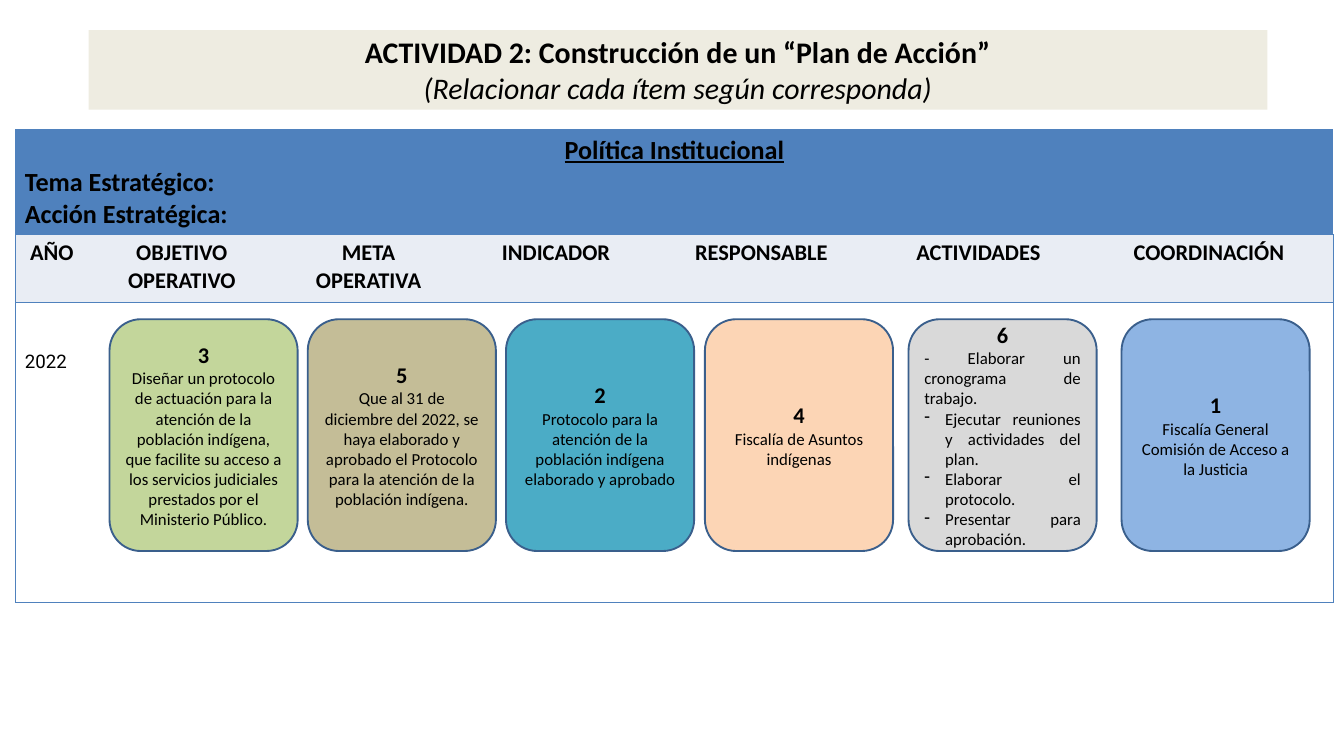
import pptx
import pptx.dml.color
import pptx.enum.shapes
import pptx.enum.text
import pptx.oxml.ns
import pptx.util
from dataclasses import dataclass
from lxml import etree

Inches = pptx.util.Inches
Pt = pptx.util.Pt
ALIGN = pptx.enum.text.PP_ALIGN
ANCHOR = pptx.enum.text.MSO_ANCHOR
SHAPE = pptx.enum.shapes.MSO_SHAPE
qn = pptx.oxml.ns.qn


@dataclass(frozen=True)
class Theme:
    font: str = "Calibri"
    year_font: str = "Roboto"
    text: str = "000000"
    title_fill: str = "EEECE1"
    policy_fill: str = "4F81BD"
    header_fill: str = "E9EDF4"
    body_fill: str = "FFFFFF"
    border: str = "4F81BD"
    card_line: str = "3A5F8C"
    title_size: int = 32
    policy_size: int = 28
    header_size: int = 24
    year_size: int = 20
    card_size: int = 18


THEME = Theme()

COLUMN_WIDTHS = [1.08, 2.79, 2.77, 2.81, 3.3, 3.16, 3.7]
ROW_HEIGHTS = [1.56, 1.01, 4.46]
POLICY = "Política Institucional\nTema Estratégico:\nAcción Estratégica:"
HEADERS = ["AÑO", "OBJETIVO OPERATIVO", "META\nOPERATIVA", "INDICADOR",
           "RESPONSABLE", "ACTIVIDADES", "COORDINACIÓN"]

# Cards: left edge, fill, number and text
CARDS = [
    (1.63, "C3D69B", "3\nDiseñar un protocolo de actuación para la atención de la "
     "población indígena, que facilite su acceso a los servicios judiciales "
     "prestados por el Ministerio Público."),
    (4.58, "C4BD97", "5\nQue al 31 de diciembre del 2022, se haya elaborado y "
     "aprobado el Protocolo para la atención de la población indígena."),
    (7.53, "4BACC6", "2\nProtocolo para la atención de la población indígena "
     "elaborado y aprobado"),
    (10.49, "FCD5B5", "4\nFiscalía de Asuntos indígenas"),
    (13.52, "D9D9D9", "6\n- Elaborar un cronograma de trabajo.\nEjecutar reuniones "
     "y actividades del plan.\nElaborar el protocolo.\nPresentar para aprobación."),
    (16.69, "8EB4E3", "1\nFiscalía General\nComisión de Acceso a la Justicia"),
]
ACTIVITIES_CARD = 4


def rgb(value):
    return pptx.dml.color.RGBColor.from_string(value)


def format_paragraph(paragraph, size, bold=False, italic=False, underline=False,
                     align=ALIGN.CENTER, font=THEME.font):
    paragraph.alignment = align
    for run in paragraph.runs:
        run.font.name = font
        run.font.size = Pt(size)
        run.font.bold = bold
        run.font.italic = italic
        run.font.underline = underline
        run.font.color.rgb = rgb(THEME.text)


def add_dash_bullet(paragraph):
    properties = paragraph._p.get_or_add_pPr()
    properties.set("marL", str(Inches(0.31)))
    properties.set("indent", str(-Inches(0.31)))
    etree.SubElement(properties, qn("a:buChar")).set("char", "-")


def add_box(slide, preset, left, top, width, height, fill, text):
    shape = slide.shapes.add_shape(
        preset, Inches(left), Inches(top), Inches(width), Inches(height))
    shape.shadow.inherit = False
    shape.fill.solid()
    shape.fill.fore_color.rgb = rgb(fill)
    shape.line.fill.background()
    shape.text_frame.word_wrap = True
    shape.text_frame.text = text
    return shape


def add_title(slide):
    shape = add_box(slide, SHAPE.RECTANGLE, 1.32, 0.45, 17.54, 1.18, THEME.title_fill,
                    "ACTIVIDAD 2: Construcción de un “Plan de Acción”\n"
                    "(Relacionar cada ítem según corresponda)")
    shape.text_frame.vertical_anchor = ANCHOR.TOP
    heading, instruction = shape.text_frame.paragraphs
    format_paragraph(heading, THEME.title_size, bold=True)
    format_paragraph(instruction, THEME.title_size, italic=True)


def add_card(slide, left, fill, text):
    shape = add_box(slide, SHAPE.ROUNDED_RECTANGLE, left, 4.75, 2.8, 3.45, fill, text)
    shape.line.color.rgb = rgb(THEME.card_line)
    shape.line.width = Pt(2)
    shape.text_frame.vertical_anchor = ANCHOR.MIDDLE
    number, *details = shape.text_frame.paragraphs
    format_paragraph(number, THEME.header_size, bold=True)
    for paragraph in details:
        format_paragraph(paragraph, THEME.card_size)
    return details


def style_cell(cell, fill, sides):
    """Draw the named sides, leave the others open, then fill the cell."""
    cell.margin_left = cell.margin_right = Inches(0.14)
    cell.margin_top = cell.margin_bottom = Inches(0.07)
    properties = cell._tc.get_or_add_tcPr()
    for side in "LRTB":
        line = etree.SubElement(properties, qn("a:ln" + side), w=str(Pt(1)))
        if side in sides:
            solid = etree.SubElement(line, qn("a:solidFill"))
            etree.SubElement(solid, qn("a:srgbClr"), val=THEME.border)
        else:
            etree.SubElement(line, qn("a:noFill"))
    cell.fill.solid()
    cell.fill.fore_color.rgb = rgb(fill)


def add_plan_table(slide):
    table = slide.shapes.add_table(
        len(ROW_HEIGHTS), len(COLUMN_WIDTHS), Inches(0.23), Inches(1.93),
        Inches(sum(COLUMN_WIDTHS)), Inches(sum(ROW_HEIGHTS))).table
    for column, width in zip(table.columns, COLUMN_WIDTHS):
        column.width = Inches(width)
    for row, height in zip(table.rows, ROW_HEIGHTS):
        row.height = Inches(height)

    # Fills and borders: only the outer edge and the row lines are drawn
    last = len(COLUMN_WIDTHS) - 1
    fills = [THEME.policy_fill, THEME.header_fill, THEME.body_fill]
    for row, fill in zip(table.rows, fills):
        for index, cell in enumerate(row.cells):
            sides = "TB" + ("L" if index == 0 else "") + ("R" if index == last else "")
            style_cell(cell, fill, sides)

    # Policy band
    policy = table.cell(0, 0)
    policy.merge(table.cell(0, last))
    policy.text_frame.text = POLICY
    for index, paragraph in enumerate(policy.text_frame.paragraphs):
        format_paragraph(paragraph, THEME.policy_size, bold=True, underline=index == 0,
                         align=ALIGN.LEFT if index else ALIGN.CENTER)

    # Column headings
    for index, header in enumerate(HEADERS):
        cell = table.cell(1, index)
        cell.text_frame.text = header
        for paragraph in cell.text_frame.paragraphs:
            format_paragraph(paragraph, THEME.header_size, bold=True)

    # Year
    year = table.cell(2, 0)
    year.margin_top = Inches(0.72)
    year.text_frame.text = "2022"
    format_paragraph(year.text_frame.paragraphs[0], THEME.year_size,
                     align=ALIGN.JUSTIFY, font=THEME.year_font)


def main():
    presentation = pptx.Presentation()
    presentation.slide_width = Inches(20)
    presentation.slide_height = Inches(11.25)
    slide = presentation.slides.add_slide(presentation.slide_layouts[6])

    add_plan_table(slide)
    add_title(slide)
    for index, (left, fill, text) in enumerate(CARDS):
        details = add_card(slide, left, fill, text)
        if index == ACTIVITIES_CARD:
            for paragraph in details:
                paragraph.alignment = ALIGN.JUSTIFY
            for paragraph in details[1:]:
                add_dash_bullet(paragraph)

    presentation.save("out.pptx")


if __name__ == "__main__":
    main()
